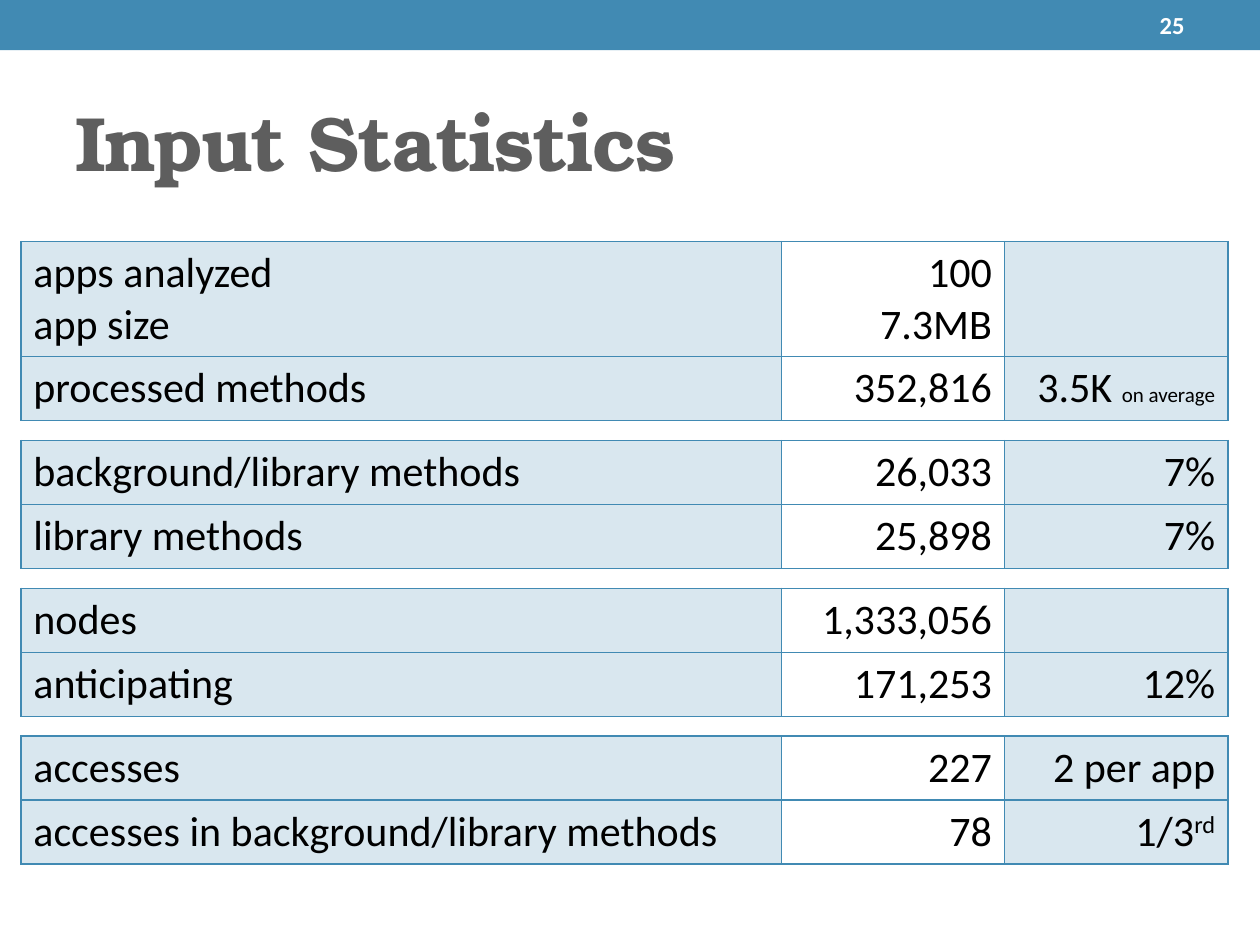
"""Build the Input Statistics slide with its four grouped tables."""

from dataclasses import dataclass

from lxml.etree import SubElement
from pptx import Presentation
from pptx.dml.color import RGBColor
from pptx.enum.shapes import MSO_SHAPE
from pptx.enum.text import MSO_ANCHOR, MSO_AUTO_SIZE, PP_ALIGN
from pptx.oxml.ns import qn
from pptx.slide import Slide
from pptx.table import _Cell
from pptx.text.text import Font
from pptx.util import Cm, Length, Pt


@dataclass(frozen=True)
class Theme:
    """Colours, fonts and type sizes of the slide."""

    accent: RGBColor = RGBColor(0x41, 0x8A, 0xB3)
    heading: RGBColor = RGBColor(0x5E, 0x5E, 0x5E)
    ink: RGBColor = RGBColor(0, 0, 0)
    paper: RGBColor = RGBColor(255, 255, 255)
    heading_font: str = "TeX Gyre Bonum"
    body_font: str = "Calibri"
    heading_size: Pt = Pt(44)
    body_size: Pt = Pt(24)
    number_size: Pt = Pt(14)
    note_size: Pt = Pt(12)
    border: Pt = Pt(1)
    tint_percent: int = 20


@dataclass(frozen=True)
class Statistic:
    """One table row, with an optional small note or superscript."""

    label: str
    value: str
    share: str = ""
    note: str = ""
    superscript: str = ""


THEME = Theme()
COLUMN_WIDTHS = (Cm(15.33), Cm(4.5), Cm(4.5))
LINE_HEIGHT = Cm(1.03)
CELL_PADDING = Cm(0.26)
TABLE_LEFT = Cm(0.42)
TABLE_TOP = Cm(4.87)
TABLE_GAP = Cm(0.4)

GROUPS = (
    (
        Statistic("apps analyzed\napp size", "100\n7.3MB"),
        Statistic("processed methods", "352,816", "3.5K ", note="on average"),
    ),
    (
        Statistic("background/library methods", "26,033", "7%"),
        Statistic("library methods", "25,898", "7%"),
    ),
    (
        Statistic("nodes", "1,333,056"),
        Statistic("anticipating", "171,253", "12%"),
    ),
    (
        Statistic("accesses", "227", "2 per app"),
        Statistic("accesses in background/library methods", "78", "1/3", superscript="rd"),
    ),
)


def style_font(font: Font, name: str, size: Length, color: RGBColor, bold: bool = False) -> None:
    """Apply a typeface, size, colour and weight."""
    font.name, font.size, font.bold = name, size, bold
    font.color.rgb = color


def add_header(page: Slide, width: Length) -> None:
    """Draw the top bar and the page number."""
    bar = page.shapes.add_shape(MSO_SHAPE.RECTANGLE, 0, 0, width, Cm(1.01))
    bar.shadow.inherit = False
    bar.fill.solid()
    bar.fill.fore_color.rgb = THEME.accent
    bar.line.fill.background()
    box = page.shapes.add_textbox(Cm(21.16), Cm(0.05), Cm(2.97), Cm(0.91))
    box.text_frame.word_wrap = True
    box.text_frame.vertical_anchor = MSO_ANCHOR.MIDDLE
    para = box.text_frame.paragraphs[0]
    para.text = "25"
    para.alignment = PP_ALIGN.RIGHT
    style_font(para.font, THEME.body_font, THEME.number_size, THEME.paper, bold=True)


def add_title(page: Slide, text: str) -> None:
    """Fill and format the title placeholder."""
    title = page.shapes.title
    title.left, title.top, title.width, title.height = Cm(1.27), Cm(1.47), Cm(22.86), Cm(2.74)
    frame = title.text_frame
    frame.text = text
    frame.auto_size = MSO_AUTO_SIZE.NONE
    frame.vertical_anchor = MSO_ANCHOR.MIDDLE
    para = frame.paragraphs[0]
    para.alignment = PP_ALIGN.LEFT
    style_font(para.font, THEME.heading_font, THEME.heading_size, THEME.heading, bold=True)
    para.runs[0]._r.get_or_add_rPr().set("spc", "-100")


def style_cell(cell: _Cell, tinted: bool) -> None:
    """Give a cell its four borders and its fill."""
    properties = cell._tc.get_or_add_tcPr()
    for side in ("lnL", "lnR", "lnT", "lnB"):
        line = SubElement(properties, qn(f"a:{side}"), w=str(THEME.border))
        fill = SubElement(line, qn("a:solidFill"))
        SubElement(fill, qn("a:srgbClr"), val=str(THEME.accent))
    if not tinted:
        cell.fill.background()
        return
    cell.fill.solid()
    cell.fill.fore_color.rgb = THEME.accent
    color = properties.find(f"{qn('a:solidFill')}/{qn('a:srgbClr')}")
    SubElement(color, qn("a:alpha"), val=str(THEME.tint_percent * 1000))


def write_cell(cell: _Cell, text: str, alignment: PP_ALIGN) -> None:
    """Write one paragraph for each line of text."""
    cell.text_frame.text = text
    for para in cell.text_frame.paragraphs:
        para.alignment = alignment
        style_font(para.font, THEME.body_font, THEME.body_size, THEME.ink)


def add_suffix(cell: _Cell, statistic: Statistic) -> None:
    """Append the small note or the superscript of a share."""
    if not (statistic.note or statistic.superscript):
        return
    span = cell.text_frame.paragraphs[0].add_run()
    span.text = statistic.note or statistic.superscript
    if statistic.note:
        span.font.size = THEME.note_size
    else:
        span._r.get_or_add_rPr().set("baseline", "30000")


def row_height(statistic: Statistic) -> Length:
    """Return the height that the label lines need."""
    return Length(LINE_HEIGHT * len(statistic.label.splitlines()) + CELL_PADDING)


def add_group(page: Slide, group: tuple[Statistic, ...], top: Length) -> Length:
    """Draw one table and return its bottom edge."""
    heights = [row_height(statistic) for statistic in group]
    frame = page.shapes.add_table(
        len(group), len(COLUMN_WIDTHS), TABLE_LEFT, top, sum(COLUMN_WIDTHS), sum(heights)
    )
    table = frame.table
    table.first_row = table.horz_banding = False
    for column, width in zip(table.columns, COLUMN_WIDTHS):
        column.width = width
    for row, height, statistic in zip(table.rows, heights, group):
        row.height = height
        texts = (statistic.label, statistic.value, statistic.share)
        for index, (cell, text) in enumerate(zip(row.cells, texts)):
            style_cell(cell, tinted=index != 1)
            write_cell(cell, text, PP_ALIGN.RIGHT if index else PP_ALIGN.LEFT)
        add_suffix(row.cells[2], statistic)
    return Length(top + sum(heights))


def main() -> None:
    """Build and save the deck."""
    deck = Presentation()
    deck.slide_width, deck.slide_height = Cm(25.4), Cm(19.05)
    page = deck.slides.add_slide(deck.slide_layouts[5])
    add_header(page, deck.slide_width)
    add_title(page, "Input Statistics")
    top = TABLE_TOP
    for group in GROUPS:
        top = Length(add_group(page, group, top) + TABLE_GAP)
    deck.save("out.pptx")


if __name__ == "__main__":
    main()
